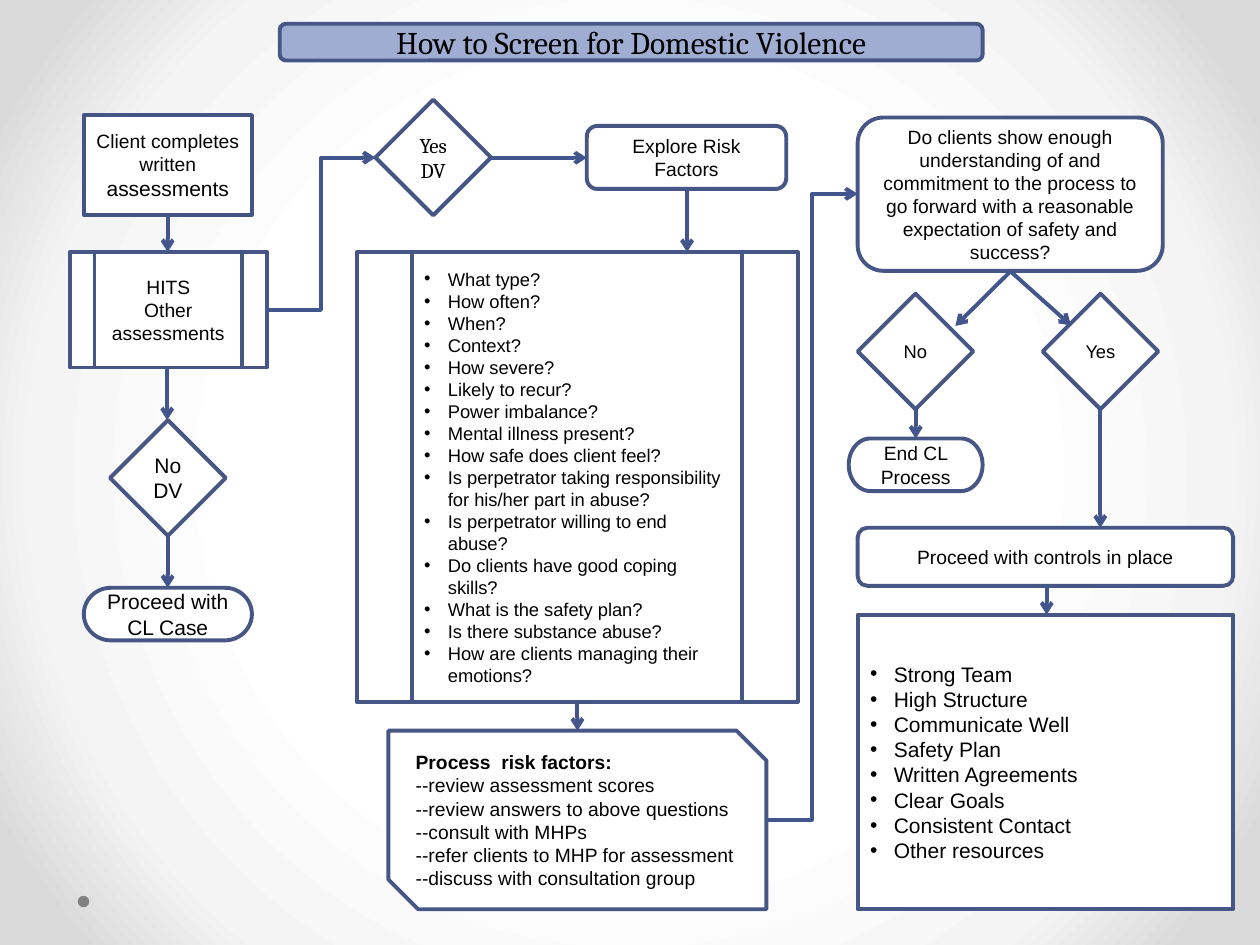
from dataclasses import dataclass

from lxml import etree
from pptx import Presentation
from pptx.dml.color import RGBColor
from pptx.enum.shapes import MSO_CONNECTOR, MSO_SHAPE
from pptx.enum.text import MSO_ANCHOR, PP_ALIGN
from pptx.oxml import parse_xml
from pptx.oxml.ns import nsdecls, qn
from pptx.slide import Slide
from pptx.util import Cm, Pt

PROCESS = MSO_SHAPE.FLOWCHART_PROCESS
PREDEFINED = MSO_SHAPE.FLOWCHART_PREDEFINED_PROCESS
DECISION = MSO_SHAPE.FLOWCHART_DECISION
TERMINATOR = MSO_SHAPE.FLOWCHART_TERMINATOR
ALTERNATE = MSO_SHAPE.FLOWCHART_ALTERNATE_PROCESS
SNIPPED = MSO_SHAPE.SNIP_2_DIAG_RECTANGLE
ROUNDED = MSO_SHAPE.ROUNDED_RECTANGLE
OVAL = MSO_SHAPE.OVAL
STRAIGHT = MSO_CONNECTOR.STRAIGHT
ELBOW = MSO_CONNECTOR.ELBOW
LEFT, CENTER = PP_ALIGN.LEFT, PP_ALIGN.CENTER
MIDDLE = MSO_ANCHOR.MIDDLE

BLACK = RGBColor(0x00, 0x00, 0x00)
WHITE = RGBColor(0xFF, 0xFF, 0xFF)
GRAY = RGBColor(0x80, 0x80, 0x80)
PERIWINKLE = RGBColor(0xA0, 0xAD, 0xD2)
NAVY = RGBColor(0x47, 0x57, 0x85)
DARK_NAVY = RGBColor(0x44, 0x55, 0x83)
ARROW_BLUE = RGBColor(0x42, 0x56, 0x8D)
BACKGROUND_STOPS = (
    (50, RGBColor(0xFF, 0xFF, 0xFF)),
    (76, RGBColor(0xF4, 0xF4, 0xF4)),
    (92, RGBColor(0xDA, 0xDA, 0xDA)),
)
LINE_WIDTH = Pt(2.25)
INDENT = Cm(0.48)
DIAMOND = 2.33


@dataclass(frozen=True)
class Run:
    text: str
    size: float
    bold: bool = False


Paragraphs = tuple[tuple[Run, ...], ...]


@dataclass(frozen=True)
class Box:
    kind: MSO_SHAPE
    left: float
    top: float
    width: float
    height: float
    paragraphs: Paragraphs
    align: PP_ALIGN = CENTER
    bullets: bool = False
    font: str = "Arial"
    fill: RGBColor = WHITE
    line: RGBColor = NAVY


@dataclass(frozen=True)
class Arrow:
    x1: float
    y1: float
    x2: float
    y2: float
    kind: MSO_CONNECTOR = STRAIGHT


def lines(size: float, *texts: str) -> Paragraphs:
    return tuple((Run(text, size),) for text in texts)


QUESTIONS = lines(
    10.5, "What type?", "How often?", "When?", "Context?", "How severe?",
    "Likely to recur?", "Power imbalance?", "Mental illness present?",
    "How safe does client feel?",
    "Is perpetrator taking responsibility for his/her part in abuse?",
    "Is perpetrator willing to end abuse?",
    "Do clients have good coping skills?", "What is the safety plan?",
    "Is there substance abuse?", "How are clients managing their emotions?",
)
RISK_STEPS = ((Run("Process  risk factors:", 11, True),),) + lines(
    11, "--review assessment scores", "--review answers to above questions",
    "--consult with MHPs", "--refer clients to MHP for assessment",
    "--discuss with consultation group",
)
CONTROLS = lines(
    12, "Strong Team", "High Structure", "Communicate Well", "Safety Plan",
    "Written Agreements", "Clear Goals", "Consistent Contact", "Other resources",
)
READINESS = lines(
    11, "Do clients show enough understanding of and commitment to the process "
    "to go forward with a reasonable expectation of safety and success?",
)
CLIENT = ((Run("Client completes written ", 11), Run("assessments", 12)),)

BOXES = (
    Box(ROUNDED, 5.64, 0.48, 14.17, 0.74,
        lines(18, "How to Screen for Domestic Violence"),
        font="Cambria", fill=PERIWINKLE),
    Box(PROCESS, 1.69, 2.32, 3.39, 2.01, CLIENT, line=DARK_NAVY),
    Box(PREDEFINED, 1.41, 5.08, 3.97, 2.33, lines(11, "HITS", "Other assessments")),
    Box(DECISION, 7.57, 2.01, DIAMOND, DIAMOND, lines(12, "Yes DV"),
        font="Cambria", line=DARK_NAVY),
    Box(DECISION, 2.22, 8.47, DIAMOND, DIAMOND, lines(12, "No DV")),
    Box(TERMINATOR, 1.69, 11.85, 3.39, 1.06, lines(12, "Proceed with CL Case")),
    Box(ALTERNATE, 11.83, 2.54, 4.02, 1.27, lines(11, "Explore Risk Factors")),
    Box(PREDEFINED, 7.19, 5.08, 8.89, 9.07, QUESTIONS, LEFT, True),
    Box(SNIPPED, 7.83, 14.73, 7.62, 3.6, RISK_STEPS, LEFT),
    Box(DECISION, 21.02, 5.92, DIAMOND, DIAMOND, lines(10.5, "Yes")),
    Box(DECISION, 17.29, 5.92, DIAMOND, DIAMOND, lines(10.5, "No")),
    Box(TERMINATOR, 17.11, 8.84, 2.7, 1.06, lines(11, "End CL Process")),
    Box(ALTERNATE, 17.29, 2.37, 6.15, 3.09, READINESS),
    Box(ALTERNATE, 17.29, 10.64, 7.57, 1.17,
        lines(11, "Proceed with controls in place")),
    Box(PROCESS, 17.29, 12.39, 7.57, 5.94, CONTROLS, LEFT, True),
)
ARROWS = (
    Arrow(3.38, 4.34, 3.38, 5.08),
    Arrow(3.37, 7.41, 3.37, 8.47),
    Arrow(3.38, 10.8, 3.38, 11.85),
    Arrow(5.37, 6.25, 7.57, 3.18, ELBOW),
    Arrow(9.9, 3.18, 11.83, 3.18),
    Arrow(13.85, 3.81, 13.85, 5.08),
    Arrow(11.64, 14.15, 11.64, 14.73),
    Arrow(20.37, 5.47, 19.26, 6.57),
    Arrow(15.44, 16.53, 17.29, 3.91, ELBOW),
    Arrow(20.37, 5.47, 21.59, 6.56),
    Arrow(18.46, 8.25, 18.46, 8.84),
    Arrow(22.18, 8.25, 22.18, 10.64),
    Arrow(21.1, 11.82, 21.1, 12.39),
)


def paint_background(s: Slide) -> None:
    s.background.fill.gradient()
    old = next(s.background._cSld.iter(qn("a:gradFill")))
    stops = "".join(
        f'<a:gs pos="{pos * 1000}"><a:srgbClr val="{color}"/></a:gs>'
        for pos, color in BACKGROUND_STOPS
    )
    old.getparent().replace(old, parse_xml(
        f'<a:gradFill {nsdecls("a")} rotWithShape="1"><a:gsLst>{stops}</a:gsLst>'
        '<a:path path="circle"><a:fillToRect l="50000" t="50000" r="50000" '
        'b="50000"/></a:path></a:gradFill>'
    ))


def draw_dot(s: Slide) -> None:
    sp = s.shapes.add_shape(OVAL, Cm(1.57), Cm(18.06), Cm(0.23), Cm(0.23))
    sp.shadow.inherit = False
    sp.fill.solid()
    sp.fill.fore_color.rgb = GRAY
    sp.line.fill.background()


def draw_box(s: Slide, box: Box) -> None:
    sp = s.shapes.add_shape(
        box.kind, Cm(box.left), Cm(box.top), Cm(box.width), Cm(box.height))
    sp.shadow.inherit = False
    sp.fill.solid()
    sp.fill.fore_color.rgb = box.fill
    sp.line.color.rgb = box.line
    sp.line.width = LINE_WIDTH
    tf = sp.text_frame
    tf.word_wrap = True
    tf.vertical_anchor = MIDDLE
    if box.kind == DECISION:
        tf.margin_left = tf.margin_right = Cm(0.05)
    for i, runs in enumerate(box.paragraphs):
        p = tf.add_paragraph() if i else tf.paragraphs[0]
        p.alignment = box.align
        if box.bullets:
            pPr = p._p.get_or_add_pPr()
            pPr.set("marL", str(INDENT))
            pPr.set("indent", str(-INDENT))
            etree.SubElement(pPr, qn("a:buFont")).set("typeface", "Arial")
            etree.SubElement(pPr, qn("a:buChar")).set("char", "•")
        for run in runs:
            r = p.add_run()
            r.text = run.text
            r.font.name = box.font
            r.font.size = Pt(run.size)
            r.font.bold = run.bold
            r.font.color.rgb = BLACK


def draw_arrow(s: Slide, arrow: Arrow) -> None:
    cxn = s.shapes.add_connector(
        arrow.kind, Cm(arrow.x1), Cm(arrow.y1), Cm(arrow.x2), Cm(arrow.y2))
    cxn.line.color.rgb = ARROW_BLUE
    cxn.line.width = LINE_WIDTH
    etree.SubElement(cxn.line._get_or_add_ln(), qn("a:tailEnd")).set("type", "arrow")
    etree.SubElement(cxn._element.spPr, qn("a:effectLst"))


def main() -> None:
    prs = Presentation()
    prs.slide_width, prs.slide_height = Cm(25.4), Cm(19.05)
    s = prs.slides.add_slide(prs.slide_layouts[6])
    paint_background(s)
    draw_dot(s)
    for box in BOXES:
        draw_box(s, box)
    for arrow in ARROWS:
        draw_arrow(s, arrow)
    prs.save("out.pptx")


if __name__ == "__main__":
    main()
